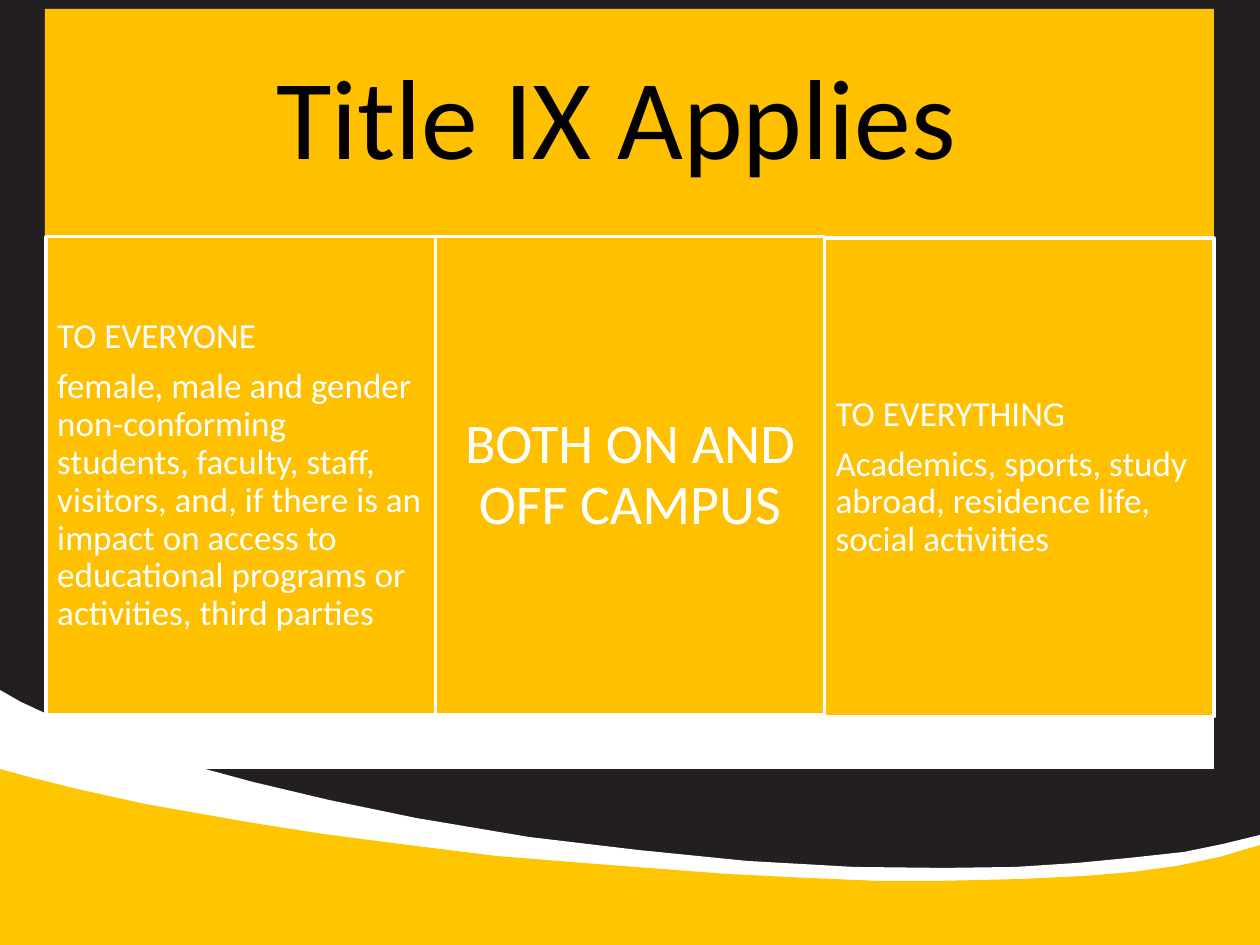
from pptx import Presentation
from pptx.dml.color import RGBColor
from pptx.enum.shapes import MSO_SHAPE as Shape
from pptx.enum.text import MSO_ANCHOR as Anchor, PP_ALIGN as Align
from pptx.util import Emu, Pt

# Content
TITLE = "Title IX Applies "
COLUMNS = [
    dict(texts=["TO EVERYONE",
                "female, male and gender non-conforming students, faculty, staff, "
                "visitors, and, if there is an impact on access to educational "
                "programs or activities, third parties"],
         size=20, inset=11, align=Align.LEFT),
    dict(texts=["BOTH ON AND OFF CAMPUS"], size=32, inset=16, align=Align.CENTER),
    dict(texts=["TO EVERYTHING",
                "Academics, sports, study abroad, residence life, social activities"],
         size=20, inset=11, align=Align.LEFT),
]
COLORS = dict(dark="231F20", wave="FEC600", panel="FFC000", white="FFFFFF", black="000000")

# Layout in px
SCALE = 914400 / 126
WIDTH, HEIGHT = 1260, 945
LEFT, PANEL_WIDTH = 45, 1169
TITLE_TOP, TITLE_HEIGHT = 9, 228
COLUMN_LEFT, COLUMN_WIDTH, COLUMN_HEIGHT = 46.3, 389.2, 478.5
COLUMN_TOPS = [236.7, 236.7, 238.3]
FOOTER_TOP, FOOTER_HEIGHT = 716, 53

# Upper edges of the two waves, left to right
WHITE_WAVE = [(0, 690), (21, 702), (49, 715), (79, 727), (111, 740), (146, 751),
              (194, 766), (253, 782), (329, 800), (416, 818), (529, 837), (638, 850),
              (747, 861), (854, 867), (944, 868), (1016, 867), (1077, 863),
              (1129, 858), (1184, 852), (1223, 844), (1260, 835)]
YELLOW_WAVE = [(0, 769), (29, 777), (77, 789), (145, 804), (247, 822), (323, 834),
               (408, 845), (496, 856), (596, 864), (727, 874), (808, 878), (878, 881),
               (939, 881), (1024, 879), (1084, 876), (1133, 872), (1177, 866),
               (1220, 857), (1260, 845)]


def px(value):
    return Emu(round(value * SCALE))


def rgb(name):
    return RGBColor.from_string(COLORS[name])


def paint(shape, fill, line=None):
    shape.shadow.inherit = False
    shape.fill.solid()
    shape.fill.fore_color.rgb = rgb(fill)
    if line:
        shape.line.color.rgb = rgb(line)
        shape.line.width = Pt(2)
    else:
        shape.line.fill.background()


def add_box(page, left, top, width, height, fill, line=None):
    box = page.shapes.add_shape(Shape.RECTANGLE, px(left), px(top), px(width), px(height))
    paint(box, fill, line)
    return box


def add_wave(page, edge, fill):
    builder = page.shapes.build_freeform(*edge[0], scale=SCALE)
    builder.add_line_segments(edge[1:] + [(WIDTH, HEIGHT), (0, HEIGHT)], close=True)
    paint(builder.convert_to_shape(), fill)


def write(box, texts, size, inset, align, color="white"):
    frame = box.text_frame
    frame.word_wrap = True
    frame.vertical_anchor = Anchor.MIDDLE
    frame.margin_left = frame.margin_right = px(inset)
    frame.margin_top = frame.margin_bottom = px(inset)
    for index, text in enumerate(texts):
        para = frame.add_paragraph() if index else frame.paragraphs[0]
        para.alignment = align
        para.line_spacing = 0.9
        para.space_after = Pt(size * 0.35)
        span = para.add_run()
        span.text = text
        span.font.name = "Calibri"
        span.font.size = Pt(size)
        span.font.color.rgb = rgb(color)


deck = Presentation()
deck.slide_width, deck.slide_height = px(WIDTH), px(HEIGHT)
page = deck.slides.add_slide(deck.slide_layouts[6])

# Backdrop
add_box(page, 0, 0, WIDTH, HEIGHT, "dark")
add_wave(page, WHITE_WAVE, "white")
add_wave(page, YELLOW_WAVE, "wave")

# Title panel
title = add_box(page, LEFT, TITLE_TOP, PANEL_WIDTH, TITLE_HEIGHT, "panel")
write(title, [TITLE], size=65, inset=34, align=Align.CENTER, color="black")

# Three columns
for index, (column, top) in enumerate(zip(COLUMNS, COLUMN_TOPS)):
    left = COLUMN_LEFT + index * COLUMN_WIDTH
    box = add_box(page, left, top, COLUMN_WIDTH, COLUMN_HEIGHT, "panel", line="white")
    write(box, **column)

# Footer strip
add_box(page, LEFT, FOOTER_TOP, PANEL_WIDTH, FOOTER_HEIGHT, "white")

deck.save("out.pptx")
